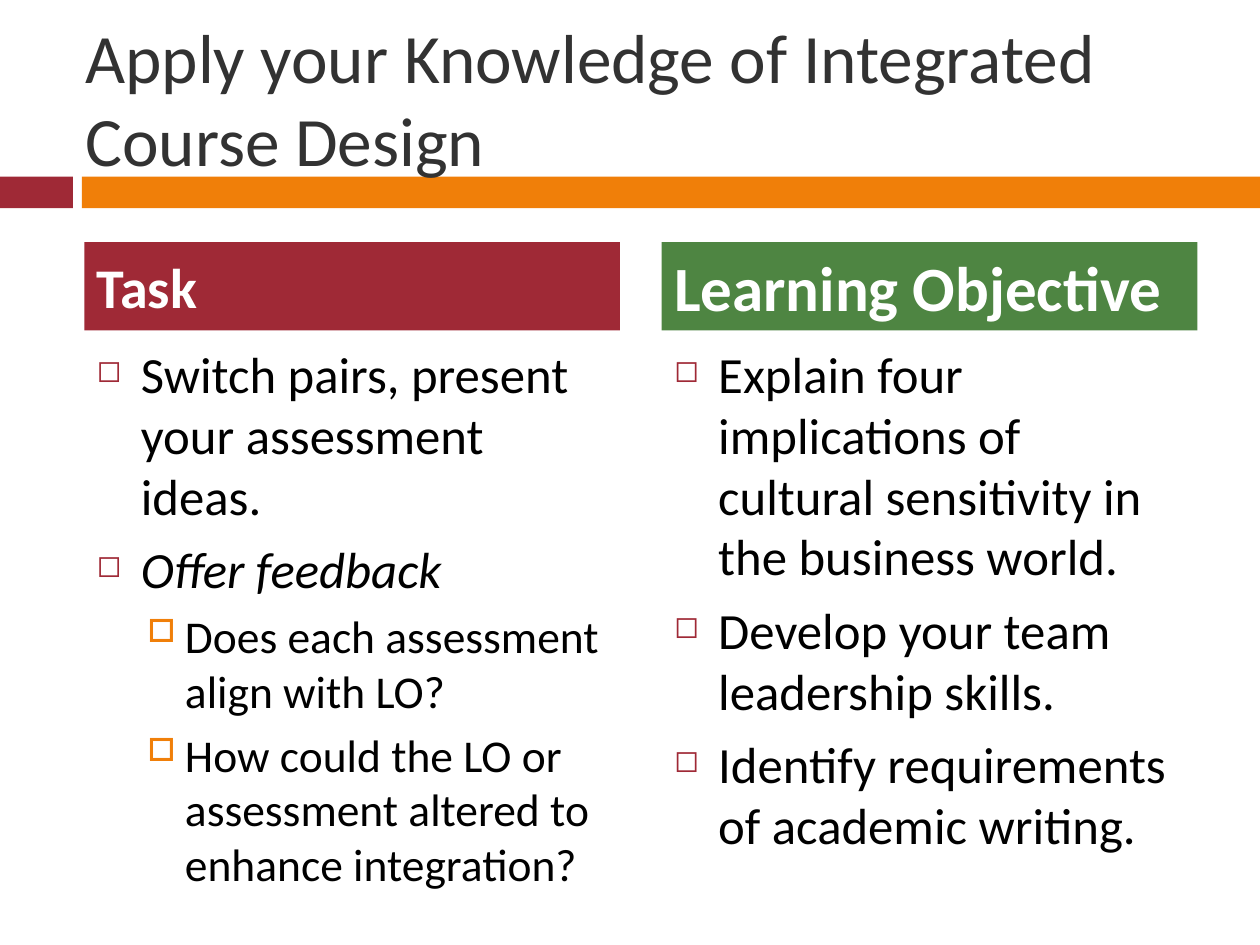
import pptx
import pptx.util
import pptx.dml.color
import pptx.enum.shapes
import pptx.enum.text
import lxml.etree
from pptx.oxml.ns import qn

Cm, Pt = pptx.util.Cm, pptx.util.Pt
MIDDLE = pptx.enum.text.MSO_ANCHOR.MIDDLE
TOP = pptx.enum.text.MSO_ANCHOR.TOP

# Content
TITLE = "Apply your Knowledge of Integrated Course Design"
COLUMNS = [  # heading, heading size, fill, body height, (level, italic, text)
    ("Task", 32, "red", 11.76, [
        (0, False, "Switch pairs, present your assessment ideas."),
        (0, True, "Offer feedback"),
        (1, False, "Does each assessment align with LO?"),
        (1, False, "How could the LO or assessment altered to enhance integration?"),
    ]),
    ("Learning Objective", 36, "green", 9.96, [
        (0, False, "Explain four implications of cultural sensitivity in the business world."),
        (0, False, "Develop your team leadership skills."),
        (0, False, "Identify requirements of academic writing."),
    ]),
]

# Style
COLORS = {"red": "9F2936", "orange": "F07F09", "green": "4E8542",
          "title": "323232", "black": "000000", "white": "FFFFFF"}
LEVELS = [
    dict(size=29, before=7, left=0.89, hang=0.89, char="◻", color="red", pct=60),
    dict(size=26, before=5.5, left=1.78, hang=0.76, char="□", color="orange", pct=70),
]
COL_LEFT, COL_WIDTH, COL_STEP = 1.7, 10.8, 11.64
HEAD_TOP, HEAD_HEIGHT, BODY_TOP = 4.88, 1.78, 6.78


def rgb(name):
    return pptx.dml.color.RGBColor.from_string(COLORS[name])


def add_bar(s, x, y, w, h, color):
    sp = s.shapes.add_shape(pptx.enum.shapes.MSO_SHAPE.RECTANGLE,
                            Cm(x), Cm(y), Cm(w), Cm(h))
    sp.shadow.inherit = False
    sp.fill.solid()
    sp.fill.fore_color.rgb = rgb(color)
    sp.line.fill.background()
    return sp


def add_box(s, x, y, w, h):
    return s.shapes.add_textbox(Cm(x), Cm(y), Cm(w), Cm(h))


def set_frame(sp, anchor):
    tf = sp.text_frame
    tf.word_wrap = True
    tf.vertical_anchor = anchor
    return tf


def write(p, text, size, color, bold=False, italic=False, before=0):
    p.text = text
    p.alignment = pptx.enum.text.PP_ALIGN.LEFT
    p.space_before = Pt(before)
    font = p.runs[0].font
    font.name, font.size = "Calibri", Pt(size)
    font.bold, font.italic = bold, italic
    font.color.rgb = rgb(color)


def add_bullet(p, level):
    pPr = p._p.get_or_add_pPr()
    pPr.set("marL", str(Cm(level["left"])))
    pPr.set("indent", str(-Cm(level["hang"])))
    clr = lxml.etree.SubElement(pPr, qn("a:buClr"))
    lxml.etree.SubElement(clr, qn("a:srgbClr"), val=COLORS[level["color"]])
    lxml.etree.SubElement(pPr, qn("a:buSzPct"), val=str(level["pct"] * 1000))
    lxml.etree.SubElement(pPr, qn("a:buChar"), char=level["char"])


prs = pptx.Presentation()
prs.slide_width, prs.slide_height = Cm(25.4), Cm(19.05)
s = prs.slides.add_slide(prs.slide_layouts[6])

# Divider bars
add_bar(s, 0, 3.56, 1.47, 0.64, "red")
add_bar(s, 1.65, 3.56, 23.75, 0.64, "orange")

# Title
tf = set_frame(add_box(s, 1.47, 0.76, 22.66, 2.41), MIDDLE)
write(tf.paragraphs[0], TITLE, 39.6, "title")

# Columns: heading bar above a bulleted list
for i, (heading, size, fill, height, items) in enumerate(COLUMNS):
    x = COL_LEFT + i * COL_STEP
    tf = set_frame(add_bar(s, x, HEAD_TOP, COL_WIDTH, HEAD_HEIGHT, fill), MIDDLE)
    write(tf.paragraphs[0], heading, size, "white", bold=True, before=7)

    tf = set_frame(add_box(s, x, BODY_TOP, COL_WIDTH, height), TOP)
    for n, (depth, italic, text) in enumerate(items):
        p = tf.add_paragraph() if n else tf.paragraphs[0]
        level = LEVELS[depth]
        p.level = depth
        write(p, text, level["size"], "black", italic=italic, before=level["before"])
        add_bullet(p, level)

prs.save("out.pptx")
